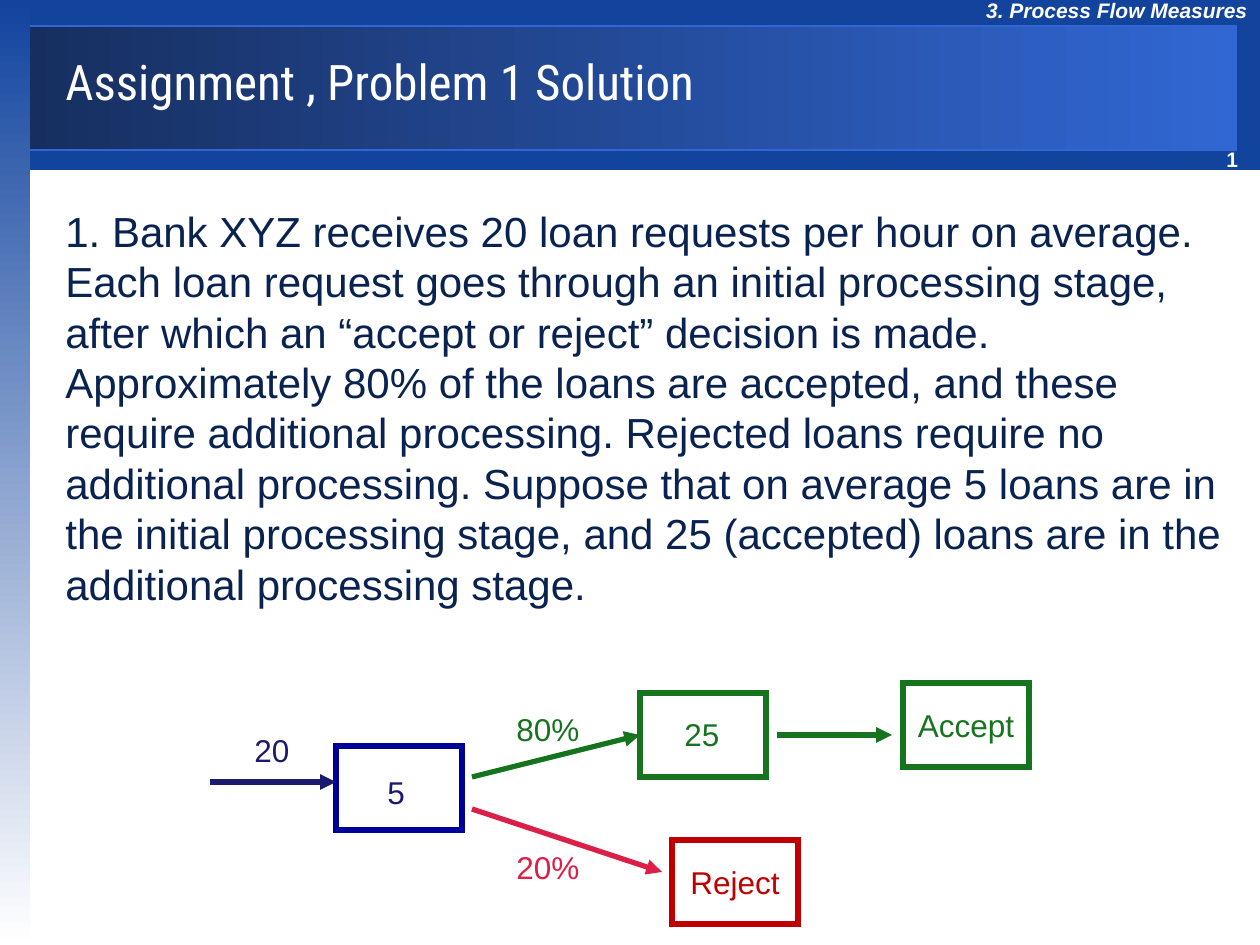
from lxml import etree
from pptx import Presentation
from pptx import util as u
from pptx.dml.color import RGBColor
from pptx.enum import shapes, text
from pptx.oxml import ns

SCALE = 914400 / 126
WHITE = RGBColor(0xFF, 0xFF, 0xFF)
BLUE = RGBColor(0x12, 0x44, 0x9E)
DEEP = RGBColor(0x17, 0x2F, 0x60)
BRIGHT = RGBColor(0x31, 0x67, 0xD3)
BODY = RGBColor(0x09, 0x22, 0x4F)
NAVY = RGBColor(0x1A, 0x1A, 0x70)
ROYAL = RGBColor(0x00, 0x00, 0x99)
GREEN = RGBColor(0x16, 0x74, 0x1F)
CRIMSON = RGBColor(0xDB, 0x1F, 0x47)
RED = RGBColor(0xC0, 0x00, 0x00)


def rect(parent, *box):
    bar = parent.add_shape(shapes.MSO_SHAPE.RECTANGLE, *[int(v * SCALE) for v in box])
    bar.shadow.inherit = False
    bar.line.fill.background()
    return bar


def write(parent, words, box, size, color, font="Arial", wrap=False):
    label = parent.add_textbox(*[int(v * SCALE) for v in box])
    frame = label.text_frame
    frame.text = words
    frame.word_wrap = wrap
    if not wrap:
        frame.auto_size = text.MSO_AUTO_SIZE.SHAPE_TO_FIT_TEXT
    style = frame.paragraphs[0].runs[0].font
    style.name, style.size, style.color.rgb = font, u.Pt(size), color
    return frame


deck = Presentation()
deck.slide_width, deck.slide_height = int(1260 * SCALE), int(945 * SCALE)
slide = deck.slides.add_slide(deck.slide_layouts[6])
page = slide.shapes

header = rect(page, 25, 0, 1235, 170)
header.fill.solid()
header.fill.fore_color.rgb = BLUE

title_band = rect(page, 25, 26, 1211, 124)
title_band.line.color.rgb = BRIGHT
title_band.line.width = u.Pt(0.75)
side_strip = rect(page, 0, 0, 30, 945)
for bar, start, end, angle in [(title_band, DEEP, BRIGHT, 0), (side_strip, BLUE, WHITE, 270)]:
    bar.fill.gradient()
    bar.fill.gradient_angle = angle
    for stop, color in zip(bar.fill.gradient_stops, (start, end)):
        stop.color.rgb = color

number = write(page, "1", (1214, 140, 50, 38), 12, WHITE)
chapter = write(page, "3. Process Flow Measures", (940, -9, 320, 38), 12, WHITE, wrap=True)
for frame in (number, chapter):
    frame.paragraphs[0].runs[0].font.bold = True
chapter.paragraphs[0].runs[0].font.italic = True
chapter.paragraphs[0].alignment = text.PP_ALIGN.RIGHT

title = write(page, "Assignment , Problem 1 Solution", (53, 22, 1171, 118), 28, WHITE,
              "Roboto Condensed", True)
title.vertical_anchor = text.MSO_ANCHOR.MIDDLE

problem = write(
    page,
    "1. Bank XYZ receives 20 loan requests per hour on average. Each loan request goes "
    "through an initial processing stage, after which an “accept or reject” decision is "
    "made. Approximately 80% of the loans are accepted, and these require additional "
    "processing. Rejected loans require no additional processing. Suppose that on average "
    "5 loans are in the initial processing stage, and 25 (accepted) loans are in the "
    "additional processing stage.",
    (53, 199, 1193, 711), 24, BODY, wrap=True)
problem.paragraphs[0].line_spacing = u.Pt(28.8)

flow = page.add_group_shape().shapes

for left, top, color, words in [
    (336, 746, ROYAL, ""),
    (640, 693, GREEN, ""),
    (903, 683, GREEN, "Accept"),
    (672, 840, RED, "Reject"),
]:
    stage = rect(flow, left, top, 126, 84)
    stage.fill.background()
    stage.line.color.rgb = color
    stage.line.width = u.Pt(3)
    etree.SubElement(stage.line._get_or_add_ln(), ns.qn("a:miter"), lim="800000")
    if words:
        frame = stage.text_frame
        frame.text = words
        frame.word_wrap = False
        frame.vertical_anchor = text.MSO_ANCHOR.MIDDLE
        frame.paragraphs[0].alignment = text.PP_ALIGN.CENTER
        style = frame.paragraphs[0].runs[0].font
        style.name, style.size, style.color.rgb = "Arial", u.Pt(18), color

for *ends, color in [
    (210, 782, 336, 782, NAVY),
    (472, 777, 640, 735, GREEN),
    (472, 809, 662, 872, CRIMSON),
    (777, 735, 892, 735, GREEN),
]:
    arrow = flow.add_connector(shapes.MSO_CONNECTOR.STRAIGHT, *[int(v * SCALE) for v in ends])
    arrow.line.color.rgb = color
    arrow.line.width = u.Pt(3)
    etree.SubElement(arrow.line._get_or_add_ln(), ns.qn("a:tailEnd"), type="triangle")
    etree.SubElement(arrow._element.spPr, ns.qn("a:effectLst"))

for words, left, top, width, color in [
    ("20", 242, 725, 60, NAVY),
    ("5", 375, 767, 43, NAVY),
    ("80%", 504, 704, 88, GREEN),
    ("20%", 504, 842, 88, CRIMSON),
    ("25", 672, 709, 60, GREEN),
]:
    write(flow, words, (left, top, width, 50), 18, color)

deck.save("out.pptx")
